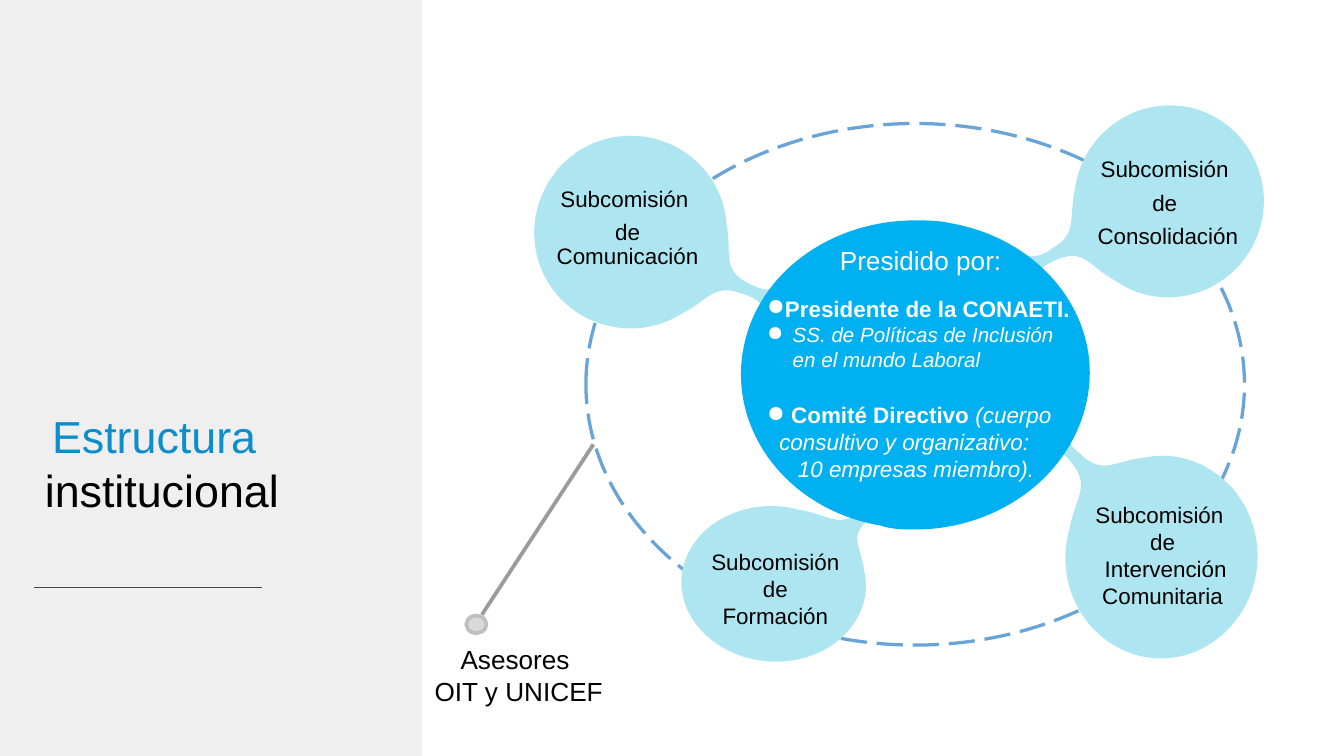
"""Build the slide on the institutional structure of the commission."""
from lxml.etree import SubElement
from pptx import Presentation
from pptx.dml.color import RGBColor
from pptx.enum.dml import MSO_LINE
from pptx.enum.shapes import MSO_CONNECTOR as Link, MSO_SHAPE as Preset
from pptx.enum.text import MSO_ANCHOR, MSO_AUTO_SIZE, PP_ALIGN as Align
from pptx.oxml.ns import qn
from pptx.util import Pt

WHITE = RGBColor(0xFF, 0xFF, 0xFF)
BLACK = RGBColor(0, 0, 0)
PANEL = RGBColor(0xEF, 0xEF, 0xEF)
TITLE_BLUE = RGBColor(0x0C, 0x8D, 0xCC)
RULE = RGBColor(0x3A, 0x49, 0x50)
ORBIT = RGBColor(0x69, 0xA4, 0xD9)
BUBBLE = RGBColor(0xAD, 0xE6, 0xF1)
CORE = RGBColor(0x00, 0xB0, 0xF0)
POINTER = RGBColor(0x9B, 0x9B, 0x9B)
DOT_FILL = RGBColor(0xD9, 0xD9, 0xD9)
DOT_EDGE = RGBColor(0xBF, 0xBF, 0xBF)

TITLE = [(" Estructura ", TITLE_BLUE), ("institucional ", BLACK)]
TITLE_FRAME = (-12.2, 190.8, 182.9, 103)
PANEL_FRAME = (-0.7, 0, 226.8, 405)
ORBIT_FRAME = (313.9, 66.2, 352.8, 279.4)
CORE_FRAME = (388.8, 118.1, 203.8, 165.6)
CORE_TEXT_FRAME = (403.9, 127.4, 178.6, 136.8)
DOT_FRAME = (249.8, 329.8, 10.8, 9.4)
TITLE_RULE = (140.4, 314.6, 18, 314.6)
ADVISOR_LINE = (317.9, 238.1, 258.2, 329.3)

TEARDROP = [
    (329, 144), (475, 0), (706, 0), (852, 144), (1000, 288), (1000, 520), (852, 668),
    (757, 758), (630, 793), (506, 762), (387, 746), (348, 688), (264, 763),
    (215, 810), (202, 837), (204, 885), (203, 912), (196, 938), (175, 957),
    (135, 1000), (78, 1000), (36, 958), (0, 918), (0, 857), (38, 820),
    (59, 801), (84, 792), (112, 793), (157, 792), (190, 791), (229, 732),
    (303, 645), (248, 605), (231, 489), (201, 368), (236, 240), (329, 144),
]
CORE_OUTLINE = [
    (498, 0), (283, 0), (92, 161), (49, 400), (0, 670), (159, 935), (406, 987),
    (438, 1000), (466, 1000), (498, 1000), (710, 1000), (901, 835), (947, 596),
    (1000, 326), (837, 61), (590, 9), (558, 0), (527, 0), (498, 0),
]
BUBBLES = [
    ((541.4, 46.1, 136.8, 139.7), 20.7),
    ((536.4, 214.6, 146.2, 139.7), 92.6),
    ((285.1, 61.9, 139, 140.4), 251.3),
    ((360.7, 246.2, 133.2, 113), 183.3),
]
LOOSE = {"line_spacing": 0.9, "space_after": Pt(4.8)}
LABELS = [
    ((283.7, 97.2, 105.1, 51.8), 12, LOOSE, ["Subcomisión ", "de Comunicación"]),
    ((556.6, 265, 132.5, 65.5), 12, {}, ["Subcomisión ", "de", " Intervención Comunitaria"]),
    ((357.1, 290.2, 116.6, 51.1), 12, {}, ["Subcomisión", " de ", "Formación"]),
    ((562.3, 81.4, 126.7, 56.9), 12, LOOSE, ["Subcomisión ", "de ", "Consolidación"]),
    ((219.6, 341.3, 116.6, 41), 14, {}, ["Asesores ", "OIT y UNICEF"]),
]
BOLD, ITALIC = {"bold": True}, {"italic": True}
CORE_TEXT = [
    (0, None, 0, [("Presidido por:", 14, {})]),
    (10.4, "●", 6.5, [("Presidente de la CONAETI.", 12, BOLD)]),
    (0, "●", 13.7, [("SS. de Políticas de Inclusión en el mundo Laboral", 11, ITALIC)]),
    (16.1, "●", 6.5, [(" ", 12, {}), ("Comité Directivo ", 12, BOLD),
                      ("(cuerpo consultivo y organizativo:", 12, ITALIC)]),
    (0, None, 16.5, [("10 empresas miembro).", 12, ITALIC)]),
]


def assign(target, values):
    for name, value in values.items():
        setattr(target, name, value)


def place(shape, frame):
    assign(shape, dict(zip(("left", "top", "width", "height"), map(Pt, frame))))


def paint(shape, fill=None, edge=None, weight=0):
    shape.shadow.inherit = False
    if fill is None:
        shape.fill.background()
    else:
        shape.fill.solid()
        shape.fill.fore_color.rgb = fill
    if edge is None:
        shape.line.fill.background()
    else:
        shape.line.color.rgb = edge
        shape.line.width = Pt(weight)
    return shape


def add_preset(slide, preset, frame, **colours):
    return paint(slide.shapes.add_shape(preset, *map(Pt, frame)), **colours)


def add_curve(slide, points, frame, fill, rotation=0):
    builder = slide.shapes.build_freeform(*points[0], scale=1000)
    builder.add_line_segments(points[1:], close=True)
    curve = paint(builder.convert_to_shape(), fill)
    place(curve, frame)
    curve.rotation = rotation
    segments = list(curve._element.iter(qn("a:lnTo")))
    for start in range(0, len(segments), 3):
        first, *others = segments[start:start + 3]
        bezier = first.makeelement(qn("a:cubicBezTo"))
        first.addprevious(bezier)
        for segment in (first, *others):
            bezier.append(segment[0])
            segment.getparent().remove(segment)


def add_line(slide, ends, colour, weight):
    line = slide.shapes.add_connector(Link.STRAIGHT, *map(Pt, ends))
    line.line.color.rgb = colour
    line.line.width = Pt(weight)
    SubElement(line._element.spPr, qn("a:effectLst"))


def add_run(paragraph, text, size, colour, style):
    run = paragraph.add_run()
    run.text = text
    run.font.color.rgb = colour
    assign(run.font, {"name": "Arial", "size": Pt(size), **style})


def add_paragraphs(slide, frame, count):
    text = slide.shapes.add_textbox(*map(Pt, frame)).text_frame
    text.word_wrap = True
    for _ in range(count - 1):
        text.add_paragraph()
    return text.paragraphs


def indent(paragraph, margin, first, bullet=None):
    props = paragraph._p.get_or_add_pPr()
    props.set("marL", str(Pt(margin)))
    props.set("indent", str(Pt(first)))
    if bullet:
        colour = SubElement(props, qn("a:buClr"))
        SubElement(colour, qn("a:srgbClr"), val=str(WHITE))
        SubElement(props, qn("a:buChar"), char=bullet)


def add_title(slide):
    title = slide.shapes.title
    place(title, TITLE_FRAME)
    assign(title.text_frame, {
        "word_wrap": True, "auto_size": MSO_AUTO_SIZE.NONE, "vertical_anchor": MSO_ANCHOR.TOP,
        "margin_left": Pt(2.9), "margin_right": Pt(2.9), "margin_top": Pt(27.7)})
    heading = title.text_frame.paragraphs[0]
    assign(heading, {"alignment": Align.CENTER, "line_spacing": Pt(29)})
    indent(heading, 21.6, -21.6)
    for words, colour in TITLE:
        add_run(heading, words, 24, colour, {})


def add_core_text(slide):
    paragraphs = add_paragraphs(slide, CORE_TEXT_FRAME, len(CORE_TEXT))
    for paragraph, (gap, bullet, margin, runs) in zip(paragraphs, CORE_TEXT):
        paragraph.alignment = Align.LEFT if margin else Align.CENTER
        paragraph.space_before = Pt(gap)
        indent(paragraph, margin, -margin if bullet else 0, bullet)
        for words, size, style in runs:
            add_run(paragraph, words, size, WHITE, style)


def main():
    deck = Presentation()
    deck.slide_width, deck.slide_height = Pt(720), Pt(405)
    slide = deck.slides.add_slide(deck.slide_layouts[5])
    panel = add_preset(slide, Preset.RECTANGLE, PANEL_FRAME, fill=PANEL)
    slide.shapes.title._element.addprevious(panel._element)
    add_title(slide)
    add_line(slide, TITLE_RULE, RULE, 0.75)
    orbit = add_preset(slide, Preset.OVAL, ORBIT_FRAME, edge=ORBIT, weight=1.75)
    orbit.line.dash_style = MSO_LINE.LONG_DASH
    for frame, rotation in BUBBLES:
        add_curve(slide, TEARDROP, frame, BUBBLE, rotation)
    add_curve(slide, CORE_OUTLINE, CORE_FRAME, CORE)
    add_core_text(slide)
    for frame, size, spacing, lines in LABELS:
        for paragraph, words in zip(add_paragraphs(slide, frame, len(lines)), lines):
            assign(paragraph, {"alignment": Align.CENTER, **spacing})
            add_run(paragraph, words, size, BLACK, {})
    add_line(slide, ADVISOR_LINE, POINTER, 2)
    add_preset(slide, Preset.OVAL, DOT_FRAME, fill=DOT_FILL, edge=DOT_EDGE, weight=2)
    deck.save("out.pptx")


if __name__ == "__main__":
    main()
